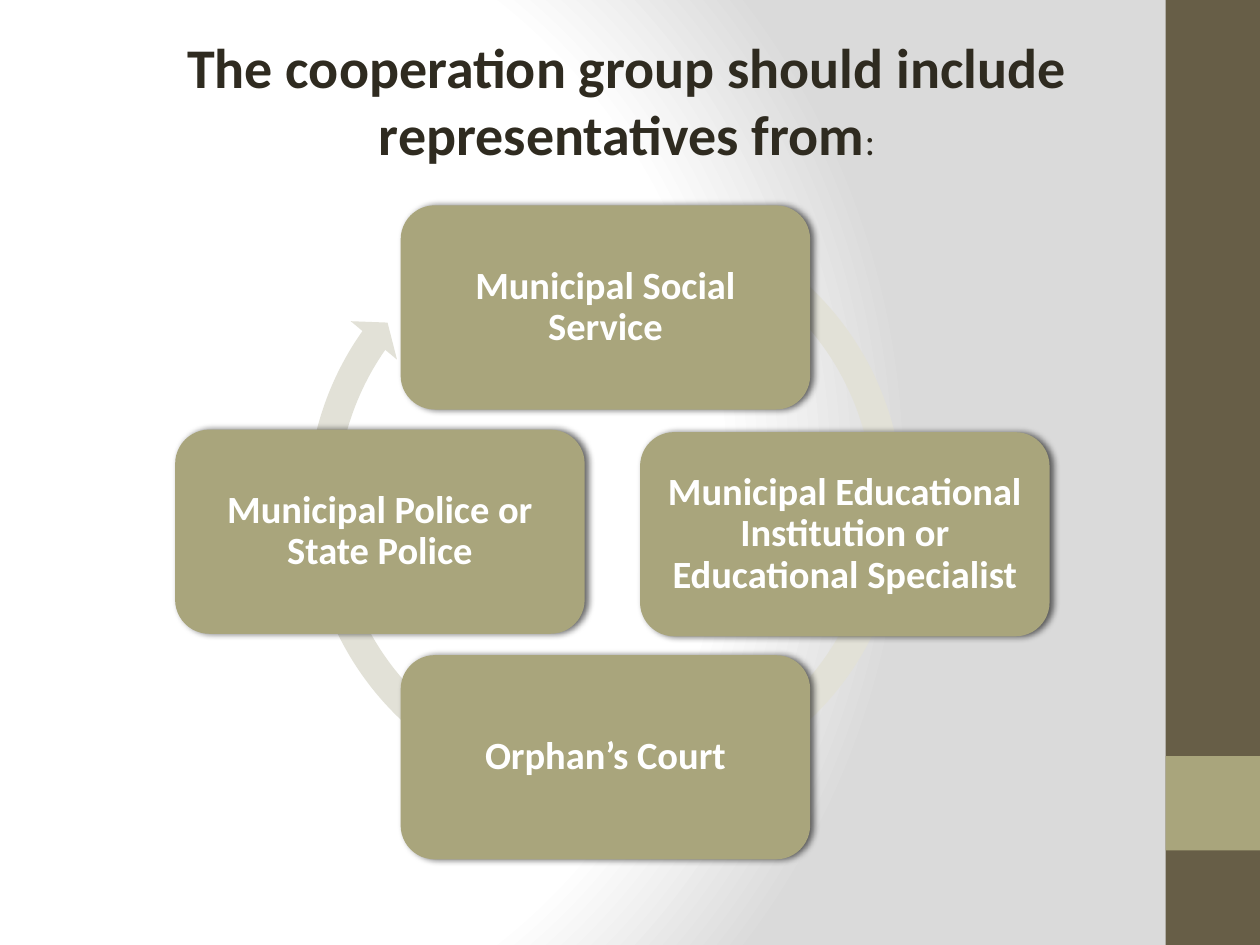
from dataclasses import dataclass

from pptx import Presentation
from pptx.dml.color import RGBColor
from pptx.enum.shapes import MSO_SHAPE as Shape
from pptx.enum.text import MSO_ANCHOR as Anchor, PP_ALIGN as Align
from pptx.oxml import parse_xml
from pptx.oxml.ns import nsdecls
from pptx.util import Inches, Pt


@dataclass(frozen=True)
class Theme:
    font: str = "Calibri"
    ink: str = "2F2B20"
    white: str = "FFFFFF"
    grey: str = "DADADA"
    brown: str = "675E47"
    olive: str = "A9A57C"
    ring: str = "E2E1D7"
    shadow: str = "000000"
    title_size: int = 32
    body_size: int = 22


THEME = Theme()
TITLE = [
    ("The cooperation group should include representatives from", THEME.title_size, True),
    (":", THEME.body_size, False),
]
MEMBERS = [
    ("Municipal Social Service", 3.18, 1.63),
    ("Municipal Educational Institution or Educational Specialist", 5.08, 3.43),
    ("Orphan’s Court", 3.18, 5.2),
    ("Municipal Police or State Police", 1.39, 3.41),
]
MEMBER_SIZE = (3.25, 1.62)
SIDEBAR = [((9.25, 0, 0.75, 7.5), THEME.brown), ((9.25, 6, 0.75, 0.75), THEME.olive)]
RING_AT = (2.32, 1.51, 4.97, 4.97)
RING_ADJUSTMENTS = (0.047, 2.729, 129.076, 179.791, 0.048)


def set_background(page):
    stops = "".join(
        f'<a:gs pos="{place * 1000}"><a:srgbClr val="{color}"/></a:gs>'
        for place, color in [(0, THEME.white), (75, THEME.white), (100, THEME.grey)]
    )
    page.element.cSld.insert(0, parse_xml(
        f'<p:bg {nsdecls("p", "a")}><p:bgPr><a:gradFill rotWithShape="1">'
        f'<a:gsLst>{stops}</a:gsLst><a:path path="circle">'
        '<a:fillToRect l="20000" t="50000" r="100000" b="50000"/></a:path>'
        '</a:gradFill><a:effectLst/></p:bgPr></p:bg>'
    ))


def add_filled(page, kind, at, color):
    shape = page.shapes.add_shape(kind, *map(Inches, at))
    shape.fill.solid()
    shape.fill.fore_color.rgb = RGBColor.from_string(color)
    shape.line.fill.background()
    shape.shadow.inherit = False
    return shape


def add_shadow(shape):
    effects = shape.element.spPr.find("{*}effectLst")
    effects.append(parse_xml(
        f'<a:outerShdw {nsdecls("a")} blurRad="{Pt(4)}" dist="{Pt(2)}" dir="0" '
        f'rotWithShape="0"><a:srgbClr val="{THEME.shadow}">'
        '<a:alpha val="60000"/></a:srgbClr></a:outerShdw>'
    ))


def add_span(para, text, *, size, color, bold=True):
    span = para.add_run()
    span.text = text
    span.font.name = THEME.font
    span.font.size = Pt(size)
    span.font.bold = bold
    span.font.color.rgb = RGBColor.from_string(color)


def add_title(page):
    box = page.shapes.add_textbox(*map(Inches, (0.75, 0.21, 8.33, 5.25)))
    frame = box.text_frame
    frame.word_wrap = True
    frame.margin_left = Inches(0.22)
    para = frame.paragraphs[0]
    para.alignment = Align.CENTER
    para.space_before = Pt(2)
    for text, size, bold in TITLE:
        add_span(para, text, size=size, color=THEME.ink, bold=bold)


def add_member(page, text, left, top):
    box = add_filled(page, Shape.ROUNDED_RECTANGLE, (left, top, *MEMBER_SIZE), THEME.olive)
    add_shadow(box)
    frame = box.text_frame
    frame.word_wrap = True
    frame.vertical_anchor = Anchor.MIDDLE
    frame.margin_left = frame.margin_right = Inches(0.09)
    frame.margin_top = frame.margin_bottom = Inches(0.09)
    para = frame.paragraphs[0]
    para.alignment = Align.CENTER
    para.line_spacing = 0.9
    add_span(para, text, size=THEME.body_size, color=THEME.white)


def main():
    """Build the slide on who belongs in the cooperation group."""
    deck = Presentation()
    deck.slide_width, deck.slide_height = Inches(10), Inches(7.5)
    page = deck.slides.add_slide(deck.slide_layouts[6])
    set_background(page)
    for at, color in SIDEBAR:
        add_filled(page, Shape.RECTANGLE, at, color)
    add_title(page)
    ring = add_filled(page, Shape.CIRCULAR_ARROW, RING_AT, THEME.ring)
    for index, value in enumerate(RING_ADJUSTMENTS):
        ring.adjustments[index] = value
    for member in MEMBERS:
        add_member(page, *member)
    deck.save("out.pptx")


if __name__ == "__main__":
    main()
